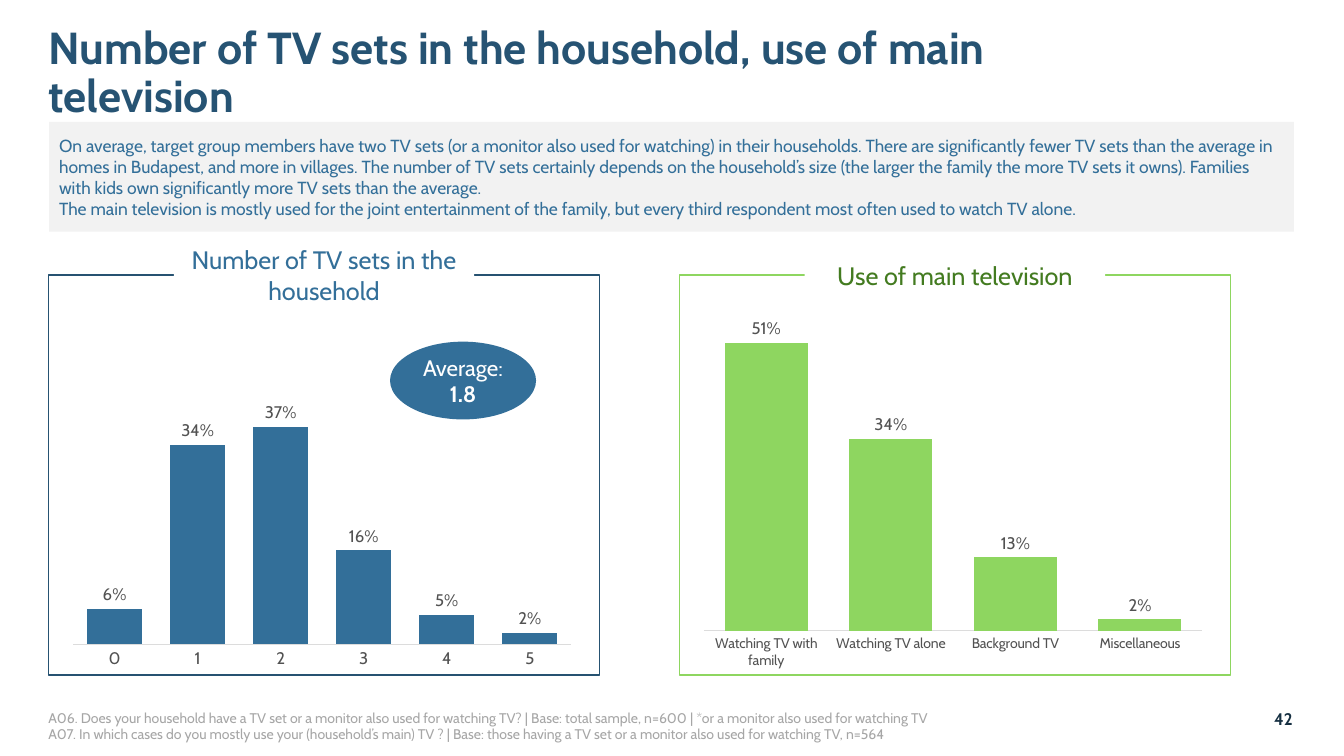
from pptx import Presentation
from pptx.chart.data import CategoryChartData
from pptx.dml.color import RGBColor
from pptx.enum.chart import XL_CHART_TYPE, XL_LABEL_POSITION, XL_TICK_LABEL_POSITION, XL_TICK_MARK
from pptx.enum.shapes import MSO_SHAPE
from pptx.enum.text import MSO_ANCHOR, PP_ALIGN
from pptx.util import Cm, Pt

COLUMN = XL_CHART_TYPE.COLUMN_CLUSTERED
OUTSIDE = XL_LABEL_POSITION.OUTSIDE_END
NO_LABEL = XL_TICK_LABEL_POSITION.NONE
NO_TICK = XL_TICK_MARK.NONE
RECT, OVAL = MSO_SHAPE.RECTANGLE, MSO_SHAPE.OVAL
MIDDLE, BOTTOM = MSO_ANCHOR.MIDDLE, MSO_ANCHOR.BOTTOM
LEFT, CENTER = PP_ALIGN.LEFT, PP_ALIGN.CENTER

FONT = "Cabin"
BLUE, GREEN, WHITE, GRAY = "336F99", "8ED660", "FFFFFF", "525252"

TITLE = "Number of TV sets in the household, use of main television"
SUMMARY = [
    "On average, target group members have two TV sets (or a monitor also used for watching) "
    "in their households. There are significantly fewer TV sets than the average in homes in "
    "Budapest, and more in villages. The number of TV sets certainly depends on the household’s "
    "size (the larger the family the more TV sets it owns). Families with kids own significantly "
    "more TV sets than the average.",
    "The main television is mostly used for the joint entertainment of the family, but every "
    "third respondent most often used to watch TV alone.",
]
NOTES = [
    "A06. Does your household have a TV set or a monitor also used for watching TV? | "
    "Base: total sample, n=600 | *or a monitor also used for watching TV",
    "A07. In which cases do you mostly use your (household’s main) TV ? | "
    "Base: those having a TV set or a monitor also used for watching TV, n=564",
]
PANELS = [
    {"head": "Number of TV sets in the household", "ink": BLUE, "edge": "265271", "color": BLUE,
     "size": 12, "data": {"0": 6, "1": 34, "2": 37, "3": 16, "4": 5, "5": 2}},
    {"head": "Use of main television", "ink": "437B20", "edge": GREEN, "color": GREEN,
     "size": 10, "data": {"Watching TV with family": 51, "Watching TV alone": 34,
                          "Background TV": 13, "Miscellaneous": 2}},
]


def rgb(code):
    return RGBColor.from_string(code)


def apply(item, **values):
    for name, value in values.items():
        setattr(item, name, value)


def style(font, size, color, bold=False):
    apply(font, name=FONT, size=Pt(size), bold=bold)
    font.color.rgb = rgb(color)


def write(shape, lines, size, color, bold=False, align=LEFT, anchor=MIDDLE, space=None):
    frame = shape.text_frame
    apply(frame, word_wrap=True, vertical_anchor=anchor)
    for i, line in enumerate(lines):
        para = frame.paragraphs[0] if i == 0 else frame.add_paragraph()
        apply(para, alignment=align, line_spacing=space)
        run = para.add_run()
        run.text = line
        style(run.font, size, color, bold)


def label(slide, box, lines, size, color, **form):
    write(slide.shapes.add_textbox(*map(Cm, box)), lines, size, color, **form)


def block(slide, kind, box, fill=None, edge=None):
    shape = slide.shapes.add_shape(kind, *map(Cm, box))
    shape.shadow.inherit = False
    if fill:
        shape.fill.solid()
        shape.fill.fore_color.rgb = rgb(fill)
    else:
        shape.fill.background()
    if edge:
        shape.line.color.rgb = rgb(edge)
        shape.line.width = Pt(1)
    else:
        shape.line.fill.background()
    return shape


def columns(slide, box, data, color, size):
    source = CategoryChartData(number_format="0")
    source.categories = list(data)
    source.add_series("Series 1", list(data.values()))
    chart = slide.shapes.add_chart(COLUMN, *map(Cm, box), source).chart
    apply(chart, has_legend=False, has_title=False)
    style(chart.font, 10, "181818")

    apply(chart.value_axis, minimum_scale=0, maximum_scale=60, visible=False,
          has_major_gridlines=False, tick_label_position=NO_LABEL)
    axis = chart.category_axis
    apply(axis, major_tick_mark=NO_TICK, minor_tick_mark=NO_TICK, has_major_gridlines=False)
    axis.format.line.color.rgb = rgb("DCDCDC")
    axis.format.line.width = Pt(0.75)
    style(axis.tick_labels.font, size, GRAY)

    plot = chart.plots[0]
    apply(plot, gap_width=50, vary_by_categories=False, has_data_labels=True)
    fill = plot.series[0].format.fill
    fill.solid()
    fill.fore_color.rgb = rgb(color)
    labels = plot.data_labels
    apply(labels, show_value=True, number_format='0"%"', number_format_is_linked=False,
          position=OUTSIDE)
    style(labels.font, 12, GRAY)


def panel(slide, box, head, ink, edge, color, size, data):
    """Draw a framed column chart whose heading breaks the top edge."""
    x, y, w, h = box
    block(slide, RECT, box, edge=edge)
    wide = 7.57
    mask = block(slide, RECT, (x + (w - wide) / 2, y - 0.6, wide, 1.2), fill=WHITE)
    write(mask, [head], 18, ink, align=CENTER)
    columns(slide, (x + 0.36, y + 0.23, w - 0.81, h - 0.2), data, color, size)


def bubble(slide, box):
    oval = block(slide, OVAL, box, fill=BLUE)
    write(oval, ["Average:", "1.8"], 16, WHITE, align=CENTER)
    oval.text_frame.paragraphs[1].runs[0].font.bold = True


def header(slide, box):
    x, y, w, h = box
    label(slide, (x, y, 26.11, 2.34), [TITLE], 32, "265373", bold=True, space=0.9)
    band = block(slide, RECT, (x + 0.27, y + 2.38, w - 0.27, h - 2.38), fill="F2F2F2")
    write(band, SUMMARY, 12.5, BLUE)


def footer(slide, box):
    x, y, w, h = box
    label(slide, (x, y, 28.96, h), NOTES, 10, "A6A6A6", anchor=BOTTOM)
    label(slide, (x + w - 3.53, y + 0.26, 3.53, 1.07), ["42"], 12, "163042",
          bold=True, align=CENTER)


def main():
    deck = Presentation()
    apply(deck, slide_width=Cm(33.87), slide_height=Cm(19.05))
    slide = deck.slides.add_slide(deck.slide_layouts[6])
    header(slide, (0.97, 0.69, 31.64, 5.15))
    for i, values in enumerate(PANELS):
        panel(slide, (1.22 + i * 15.9, 6.93, 13.89, 10.08), **values)
    bubble(slide, (9.83, 8.61, 3.68, 1.96))
    footer(slide, (0.97, 17.32, 33.14, 1.52))
    deck.save("out.pptx")


if __name__ == "__main__":
    main()
